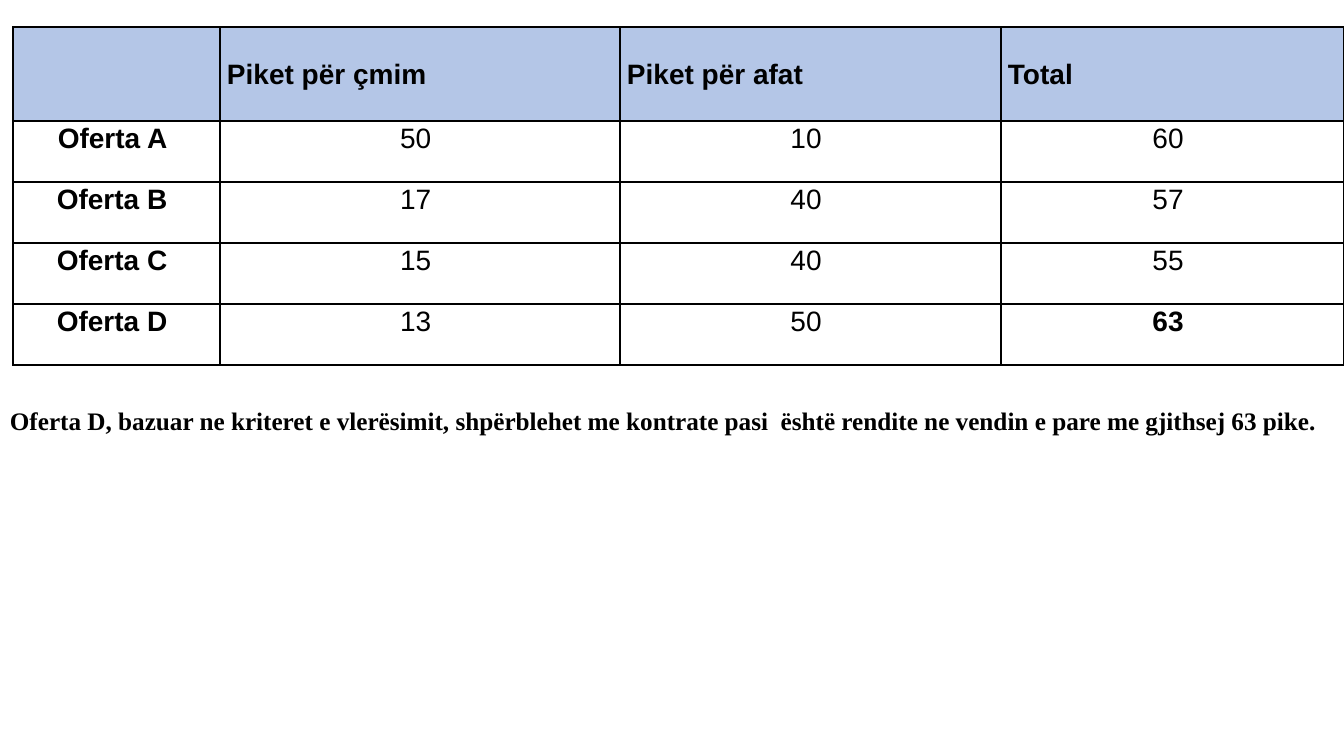
import pptx
import pptx.dml.color
import pptx.enum.text
import pptx.oxml
import pptx.oxml.ns
import pptx.util

BLACK = pptx.dml.color.RGBColor(0x00, 0x00, 0x00)
HEADER_BLUE = pptx.dml.color.RGBColor(0xB4, 0xC6, 0xE7)
ALIGN = pptx.enum.text.PP_ALIGN
ANCHOR = pptx.enum.text.MSO_ANCHOR

PAGE_SIZE = (1344, 756)
COLUMN_WIDTHS = (207, 400, 381, 343)
HEADER_HEIGHT, ROW_HEIGHT = 94, 61
SCORES = (
    ("", "Piket për çmim", "Piket për afat", "Total"),
    ("Oferta A ", "50 ", "10 ", "60 "),
    ("Oferta B ", "17 ", "40 ", "57 "),
    ("Oferta C ", "15 ", "40 ", "55 "),
    ("Oferta D ", "13 ", "50 ", "63 "),
)
WINNER = (4, 3)
CONCLUSION = (
    "Oferta D, bazuar ne kriteret e vlerësimit, shpërblehet me kontrate pasi  "
    "është rendite ne vendin e pare me gjithsej 63 pike."
)


def px(count):
    return pptx.util.Emu(round(count * 914400 / 100.8))


class SlideBuilder:
    table_font = "Arial"
    table_size = 20
    note_font = "Times New Roman"
    note_size = 18

    def __init__(self, page):
        self.page = page

    def format_para(self, para, font, size, bold, align, spacing):
        para.alignment = align
        para.line_spacing = spacing
        for span in para.runs:
            span.font.name = font
            span.font.size = pptx.util.Pt(size)
            span.font.bold = bold
            span.font.color.rgb = BLACK

    def add_borders(self, cell):
        properties = cell._tc.get_or_add_tcPr()
        for side in ("lnL", "lnR", "lnT", "lnB"):
            properties.append(pptx.oxml.parse_xml(
                f'<a:{side} {pptx.oxml.ns.nsdecls("a")} w="12700">'
                f'<a:solidFill><a:srgbClr val="{BLACK}"/></a:solidFill></a:{side}>'))

    def format_cell(self, cell, text, is_header, bold):
        cell.margin_left, cell.margin_right = px(7), px(8)
        cell.margin_top = cell.margin_bottom = 0
        cell.vertical_anchor = ANCHOR.MIDDLE if is_header else ANCHOR.TOP
        cell.text_frame.text = text
        self.format_para(cell.text_frame.paragraphs[0], self.table_font, self.table_size,
                         bold, ALIGN.LEFT if is_header else ALIGN.CENTER, 1.07)
        self.add_borders(cell)
        if is_header:
            cell.fill.solid()
            cell.fill.fore_color.rgb = HEADER_BLUE
        else:
            cell.fill.background()

    def add_score_table(self, left, top):
        heights = [HEADER_HEIGHT] + [ROW_HEIGHT] * (len(SCORES) - 1)
        table = self.page.shapes.add_table(
            len(SCORES), len(COLUMN_WIDTHS), px(left), px(top),
            px(sum(COLUMN_WIDTHS)), px(sum(heights))).table
        for column, width in zip(table.columns, COLUMN_WIDTHS):
            column.width = px(width)
        for row, height in zip(table.rows, heights):
            row.height = px(height)
        for row, texts in enumerate(SCORES):
            for column, text in enumerate(texts):
                bold = row == 0 or column == 0 or (row, column) == WINNER
                self.format_cell(table.cell(row, column), text, row == 0, bold)

    def add_note(self, text, left, top, width, height):
        box = self.page.shapes.add_textbox(px(left), px(top), px(width), px(height))
        box.text_frame.word_wrap = True
        box.text_frame.auto_size = pptx.enum.text.MSO_AUTO_SIZE.SHAPE_TO_FIT_TEXT
        box.text_frame.text = text
        para = box.text_frame.paragraphs[0]
        para.space_after = pptx.util.Pt(7.9)
        self.format_para(para, self.note_font, self.note_size, True, ALIGN.LEFT, 1.06)


def main():
    deck = pptx.Presentation()
    deck.slide_width, deck.slide_height = map(px, PAGE_SIZE)
    builder = SlideBuilder(deck.slides.add_slide(deck.slide_layouts[6]))

    # Scores of the four offers
    builder.add_score_table(13, 27)

    # Conclusion under the table
    builder.add_note(CONCLUSION, 0, 399, 1344, 42)

    deck.save("out.pptx")


if __name__ == "__main__":
    main()
